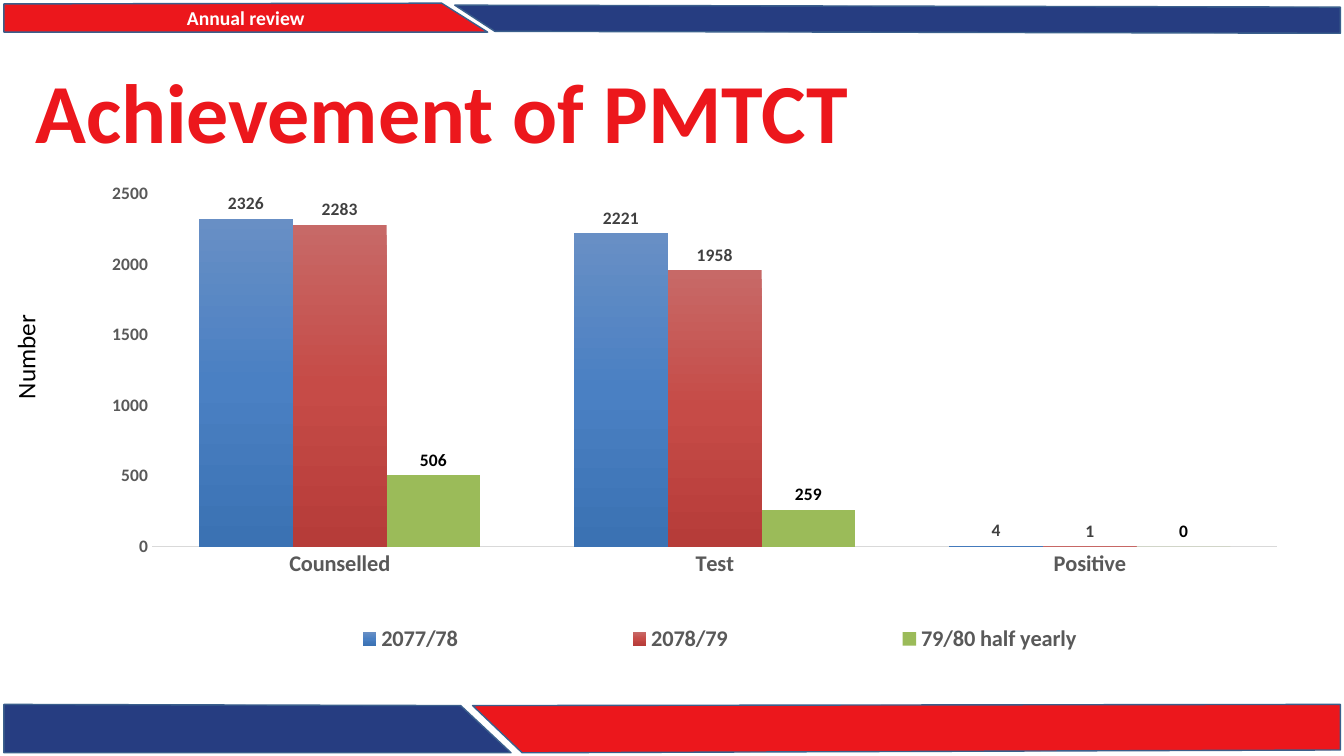
"""Build the PMTCT achievement slide with a clustered column chart."""
from dataclasses import dataclass

from lxml import etree
from pptx import Presentation
from pptx import util as u
from pptx.chart import data
from pptx.dml.color import RGBColor
from pptx.enum import chart as charts
from pptx.enum import text
from pptx.oxml import parse_xml
from pptx.oxml.ns import nsdecls, qn

COLOURS = {
    "red": "EC171C", "blue": "263D81", "outline": "3A5F8C", "white": "FFFFFF",
    "black": "000000", "grey": "595959", "dark": "404040", "axis": "D9D9D9",
}
FONT = "Calibri"
CATEGORIES = ("Counselled", "Test", "Positive")


@dataclass
class Band:
    points: tuple[tuple[float, float], ...]
    colour: str
    label: str = ""


@dataclass
class YearSeries:
    name: str
    values: tuple[int, ...]
    fills: tuple[str, ...]
    label_colour: str


BANDS = (
    Band(((0.1, 0.1), (11.13, 0.08), (12.29, 0.81), (0.1, 0.81)), "red", "Annual review"),
    Band(((0.1, 17.75), (11.61, 17.78), (12.88, 18.97), (0.1, 18.97)), "blue"),
    Band(((11.91, 17.78), (33.78, 17.75), (33.78, 18.9), (13.16, 18.97)), "red"),
    Band(((11.46, 0.13), (33.78, 0.18), (33.78, 0.84), (12.47, 0.79)), "blue"),
)
YEARS = (
    YearSeries("2077/78", (2326, 2221, 4), ("688FC5", "4A80C3", "3B72B3"), "dark"),
    YearSeries("2078/79", (2283, 1958, 1), ("C76967", "C64B47", "B63C39"), "dark"),
    YearSeries("79/80 half yearly", (506, 259, 0), ("9BBB59",), "black"),
)


def rgb(name: str) -> RGBColor:
    return RGBColor.from_string(COLOURS[name])


def style_font(font, size: float, colour: str, bold: bool = True) -> None:
    font.name, font.size, font.bold = FONT, u.Pt(size), bold
    font.color.rgb = rgb(colour)


def write_text(shape, content: str, *, size: float, colour: str, bold: bool = True,
               align=text.PP_ALIGN.LEFT, anchor=text.MSO_ANCHOR.MIDDLE,
               wrap: bool = True, spacing: float = 1.0) -> None:
    frame = shape.text_frame
    frame.word_wrap, frame.vertical_anchor = wrap, anchor
    paragraph = frame.paragraphs[0]
    paragraph.alignment, paragraph.line_spacing = align, spacing
    run = paragraph.add_run()
    run.text = content
    style_font(run.font, size, colour, bold)


def add_band(slide, band: Band) -> None:
    points = [(u.Cm(x), u.Cm(y)) for x, y in band.points]
    builder = slide.shapes.build_freeform(*points[0], scale=1.0)
    builder.add_line_segments(points[1:], close=True)
    shape = builder.convert_to_shape()
    shape.shadow.inherit = False
    shape.fill.solid()
    shape.fill.fore_color.rgb = rgb(band.colour)
    shape.line.color.rgb = rgb("outline")
    shape.line.width = u.Pt(1)
    if band.label:
        write_text(shape, band.label, size=14, colour="white", align=text.PP_ALIGN.CENTER)


def place(element, index: int, inner: bool, **box: float) -> None:
    old = element.find(qn("c:layout"))
    if old is not None:
        element.remove(old)
    layout = parse_xml(f"<c:layout {nsdecls('c')}><c:manualLayout/></c:layout>")
    settings = {"layoutTarget": "inner"} if inner else {}
    settings |= {"xMode": "edge", "yMode": "edge"} | box
    for tag, value in settings.items():
        etree.SubElement(layout[0], qn(f"c:{tag}")).set("val", str(value))
    element.insert(index, layout)


def fill_series(series, fills: tuple[str, ...]) -> None:
    fill = series.format.fill
    if len(fills) == 1:
        fill.solid()
        fill.fore_color.rgb = RGBColor.from_string(fills[0])
        return
    fill.gradient()
    gradient = series._element.find(qn("c:spPr")).find(qn("a:gradFill"))
    stops = "".join(
        f'<a:gs pos="{position * 50000}"><a:srgbClr val="{colour}"/></a:gs>'
        for position, colour in enumerate(fills))
    gradient.getparent().replace(gradient, parse_xml(
        f"<a:gradFill {nsdecls('a')}><a:gsLst>{stops}</a:gsLst>"
        '<a:lin ang="5400000" scaled="0"/></a:gradFill>'))


def style_axis(axis, size: float) -> None:
    axis.has_major_gridlines = False
    axis.major_tick_mark = axis.minor_tick_mark = charts.XL_TICK_MARK.NONE
    style_font(axis.tick_labels.font, size, "grey")


def add_achievement_chart(slide) -> None:
    chart_data = data.CategoryChartData()
    chart_data.categories = CATEGORIES
    for year in YEARS:
        chart_data.add_series(year.name, year.values)
    chart = slide.shapes.add_chart(
        charts.XL_CHART_TYPE.COLUMN_CLUSTERED,
        u.Cm(1.63), u.Cm(4.45), u.Cm(31.09), u.Cm(12.57), chart_data).chart
    chart.has_title = False
    style_font(chart.font, 10, "black", bold=False)

    plot = chart.plots[0]
    plot.gap_width, plot.overlap, plot.vary_by_categories = 100, 0, False
    for series, year in zip(plot.series, YEARS):
        fill_series(series, year.fills)
        labels = series.data_labels
        labels.show_value = True
        labels.position = charts.XL_LABEL_POSITION.OUTSIDE_END
        style_font(labels.font, 12.5, year.label_colour)

    style_axis(chart.category_axis, 16)
    chart.category_axis.format.line.color.rgb = rgb("axis")
    chart.category_axis.format.line.width = u.Pt(1)
    value_axis = chart.value_axis
    style_axis(value_axis, 12.5)
    value_axis.format.line.fill.background()
    value_axis.minimum_scale, value_axis.maximum_scale = 0, 2500
    value_axis.major_unit = 500

    chart.has_legend = True
    legend = chart.legend
    legend.position = charts.XL_LEGEND_POSITION.BOTTOM
    legend.include_in_layout = False
    style_font(legend.font, 16, "grey")
    place(legend._element, 1, False, x=0.106, y=0.877, w=0.85, h=0.1)
    plot_area = chart._chartSpace.chart.plotArea
    place(plot_area, 0, True, x=0.071, y=0.035, w=0.912, h=0.707)


def main() -> None:
    presentation = Presentation()
    presentation.slide_width, presentation.slide_height = u.Cm(33.87), u.Cm(19.05)
    slide = presentation.slides.add_slide(presentation.slide_layouts[6])
    for band in BANDS:
        add_band(slide, band)
    title = slide.shapes.add_textbox(u.Cm(0.64), u.Cm(1.09), u.Cm(32.72), u.Cm(3.68))
    write_text(title, "Achievement of PMTCT", size=60, colour="red", spacing=0.9)
    add_achievement_chart(slide)
    axis_name = slide.shapes.add_textbox(u.Cm(-0.69), u.Cm(8.46), u.Cm(2.67), u.Cm(1.02))
    axis_name.rotation = 270
    write_text(axis_name, "Number", size=18, colour="black", bold=False,
               anchor=text.MSO_ANCHOR.TOP, wrap=False)
    presentation.save("out.pptx")


if __name__ == "__main__":
    main()
